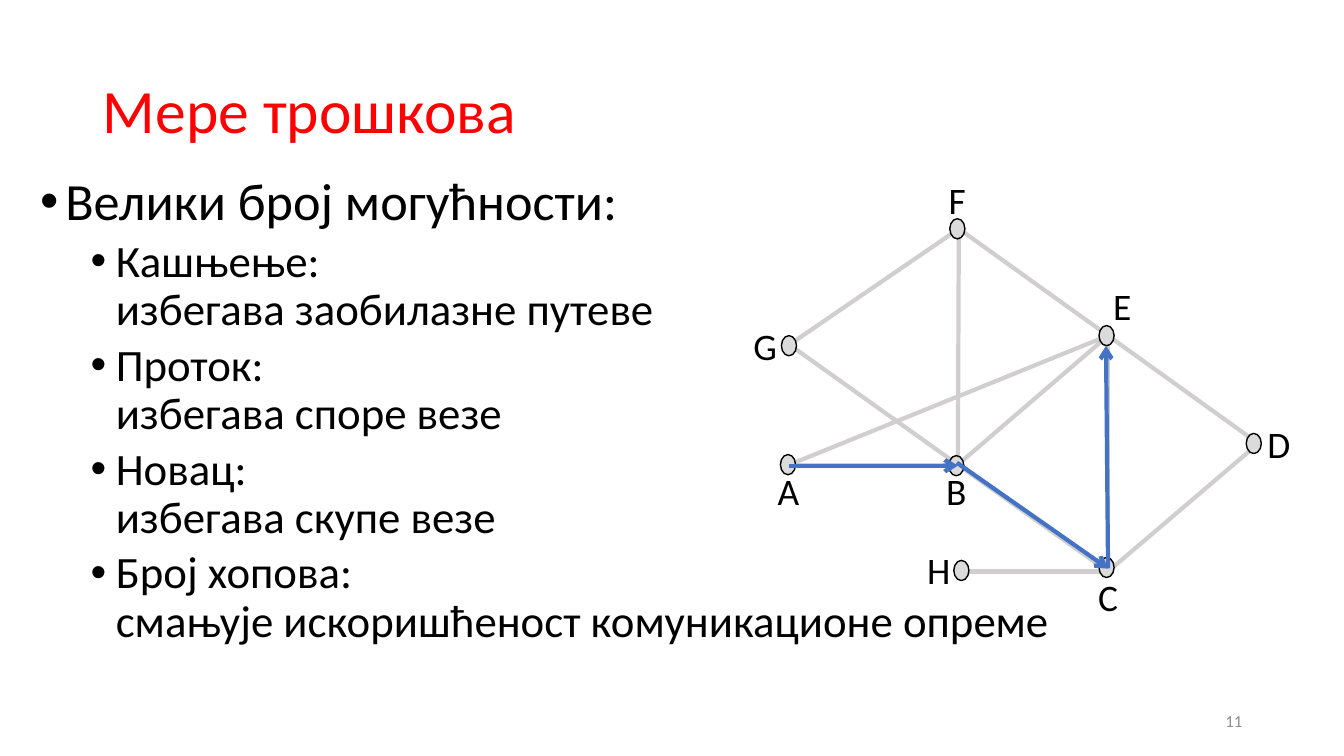
from pptx import Presentation
from pptx.dml.color import RGBColor
from pptx.enum.shapes import MSO_CONNECTOR as CONNECTOR, MSO_SHAPE as SHAPE
from pptx.enum.text import MSO_ANCHOR as ANCHOR, PP_ALIGN as ALIGN
from pptx.oxml.ns import qn
from pptx.util import Pt
from lxml.etree import SubElement

PX = 9144
COLORS = {"title": "FF0000", "text": "000000", "link": "D0CECE",
          "node": "DBDBDB", "route": "4472C4", "number": "8C8C8C"}

COSTS = [
    (0, "Велики број могућности:"),
    (1, "Кашњење:\vизбегава заобилазне путеве"),
    (1, "Проток:\vизбегава споре везе"),
    (1, "Новац:\vизбегава скупе везе"),
    (1, "Број хопова:\vсмањује искоришћеност комуникационе опреме"),
]
LEVELS = [{"size": 37.3, "before": 10, "indent": 25},
          {"size": 32, "before": 5, "indent": 75}]

HUBS = {"A": (783, 461), "B": (950, 461), "C": (1099, 567), "D": (1248, 440),
        "E": (1099, 333), "F": (951, 227), "G": (783, 342), "H": (950, 567)}
DOTS = {"D": (1236, 430), "F": (942, 217), "B": (941, 452), "C": (1090, 553),
        "E": (1090, 323), "G": (775, 333), "H": (946, 556), "A": (774, 451)}
LABELS = {"A": (761, 459, 42), "B": (928, 459, 41), "C": (1079, 564, 40),
          "D": (1247, 412, 43), "E": (1094, 276, 38), "F": (931, 170, 37),
          "G": (737, 315, 44), "H": (909, 538, 44)}
LINKS = "AB BC CE BE AE BF BG GF FE ED CD CH".split()
ROUTE = [((783, 462), (950, 462)), ((949, 459), (1099, 564)),
         ((1099, 564), (1097, 343))]


class Board:
    """Draws styled elements on one slide, with lengths in px."""

    def __init__(self, deck, font):
        self.font = font
        self.slide = deck.slides.add_slide(deck.slide_layouts[5])
        self.shapes = self.slide.shapes

    def place(self, shape, left, top, width, height):
        box = {"left": left, "top": top, "width": width, "height": height}
        for name, length in box.items():
            setattr(shape, name, length * PX)

    def style(self, paragraph, size, color, **formats):
        for name, value in formats.items():
            setattr(paragraph, name, value)
        for run in paragraph.runs:
            for name, value in {"name": self.font, "size": Pt(size)}.items():
                setattr(run.font, name, value)
            run.font.color.rgb = RGBColor.from_string(COLORS[color])

    def title(self, text, box):
        heading = self.shapes.title
        self.place(heading, *box)
        frame = heading.text_frame
        frame.text = text
        frame.vertical_anchor = ANCHOR.MIDDLE
        self.style(frame.paragraphs[0], 44, "title",
                   alignment=ALIGN.LEFT, line_spacing=0.9)

    def text(self, text, box, size, color, align, wrap=True):
        frame = self.shapes.add_textbox(*(n * PX for n in box)).text_frame
        frame.text = text
        frame.word_wrap = wrap
        frame.vertical_anchor = ANCHOR.MIDDLE
        self.style(frame.paragraphs[0], size, color, alignment=align)

    def bullets(self, items, box):
        frame = self.shapes.add_textbox(*(n * PX for n in box)).text_frame
        frame.word_wrap = True
        for index, (level, text) in enumerate(items):
            item = frame.add_paragraph() if index else frame.paragraphs[0]
            item.text = text
            look = LEVELS[level]
            self.style(item, look["size"], "text", level=level,
                       line_spacing=0.9, space_before=Pt(look["before"]))
            props = item._p.get_or_add_pPr()
            props.set("marL", str(look["indent"] * PX))
            props.set("indent", str(-25 * PX))
            SubElement(props, qn("a:buFont"), typeface="Arial")
            SubElement(props, qn("a:buChar"), char="•")

    def line(self, start, end, color, arrow=False):
        ends = (n * PX for n in (*start, *end))
        link = self.shapes.add_connector(CONNECTOR.STRAIGHT, *ends)
        link.line.color.rgb = RGBColor.from_string(COLORS[color])
        link.line.width = Pt(3)
        if arrow:
            SubElement(link.line._get_or_add_ln(), qn("a:tailEnd"), type="arrow")
        SubElement(link._element.spPr, qn("a:effectLst"))

    def node(self, left, top):
        box = (n * PX for n in (left, top, 15, 20))
        dot = self.shapes.add_shape(SHAPE.OVAL, *box)
        dot.shadow.inherit = False
        dot.fill.solid()
        dot.fill.fore_color.rgb = RGBColor.from_string(COLORS["node"])
        dot.line.color.rgb = RGBColor.from_string(COLORS["text"])
        dot.line.width = Pt(1)


def main():
    deck = Presentation()
    deck.slide_width, deck.slide_height = 1333 * PX, 750 * PX
    board = Board(deck, "Calibri")
    board.title("Мере трошкова", (92, 40, 1150, 145))
    board.bullets(COSTS, (30, 169, 1128, 522))
    for start, end in LINKS:
        board.line(HUBS[start], HUBS[end], "link")
    for spot in DOTS.values():
        board.node(*spot)
    for letter, (left, top, width) in LABELS.items():
        board.text(letter, (left, top, width, 55), 26.7, "text",
                   ALIGN.CENTER, wrap=False)
    for start, end in ROUTE:
        board.line(start, end, "route", arrow=True)
    board.text("11", (942, 695, 300, 40), 12, "number", ALIGN.RIGHT)
    deck.save("out.pptx")


if __name__ == "__main__":
    main()
